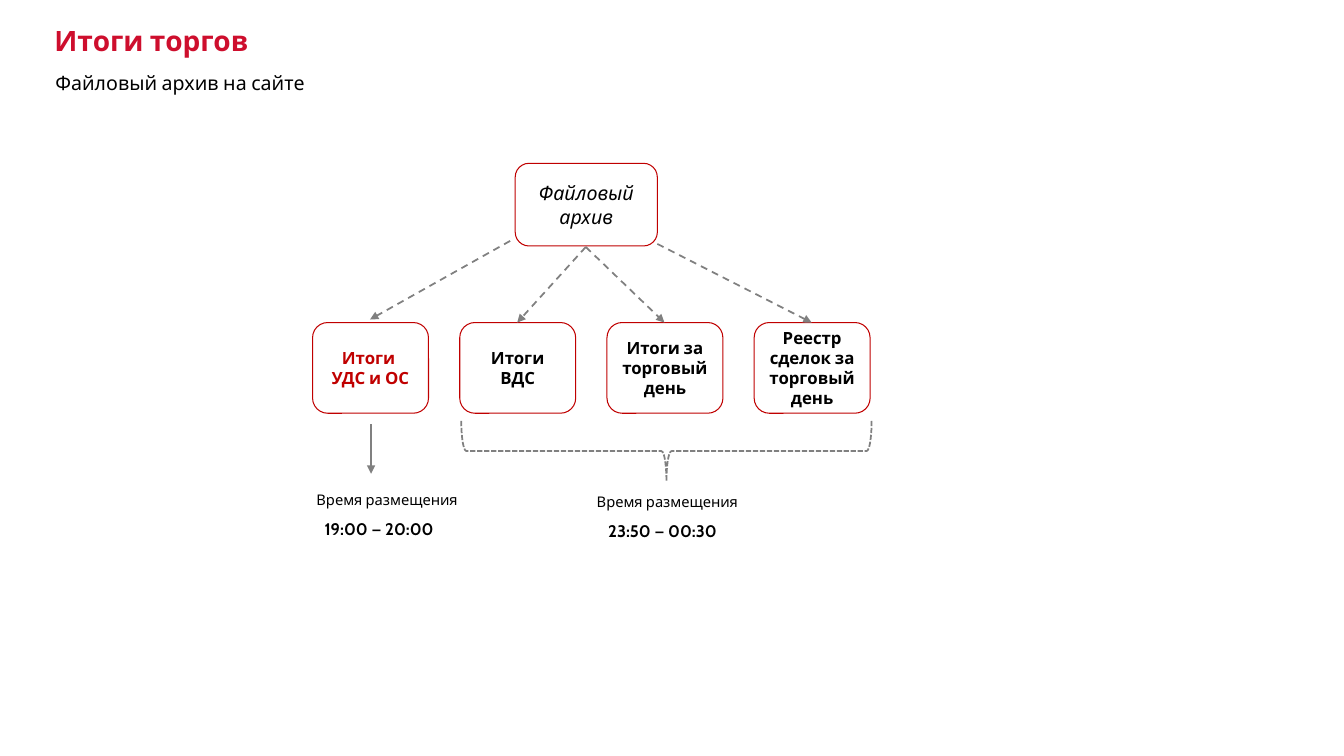
"""Builds the slide on the file archive of trading results."""
import pptx
import pptx.util
import pptx.dml.color
import pptx.enum.dml
import pptx.enum.shapes
import pptx.enum.text
import pptx.oxml
import pptx.oxml.ns

Inches = pptx.util.Inches
Pt = pptx.util.Pt
RGBColor = pptx.dml.color.RGBColor
SHAPE = pptx.enum.shapes.MSO_SHAPE
DASH = pptx.enum.dml.MSO_LINE
ALIGN = pptx.enum.text.PP_ALIGN
ANCHOR = pptx.enum.text.MSO_ANCHOR

TITLE_RED = RGBColor(0xCE, 0x0E, 0x2D)
RED = RGBColor(0xC0, 0x00, 0x00)
BLACK = RGBColor(0x00, 0x00, 0x00)
GRAY = RGBColor(0x80, 0x80, 0x80)


def write(sp, text, align, size, color=BLACK, **fmt):
    tf = sp.text_frame
    tf.word_wrap = True
    for i, line in enumerate(text.split("\n")):
        p = tf.paragraphs[0] if i == 0 else tf.add_paragraph()
        p.alignment = align
        r = p.add_run()
        r.text = line
        r.font.color.rgb = color
        for name, value in {"name": "Cabin", "size": Pt(size), **fmt}.items():
            setattr(r.font, name, value)
    return tf


def outline(sp, color, width, dash=None):
    sp.line.color.rgb = color
    sp.line.width = Pt(width)
    if dash:
        sp.line.dash_style = dash


prs = pptx.Presentation()
prs.slide_width, prs.slide_height = Inches(13.33), Inches(7.5)
s = prs.slides.add_slide(prs.slide_layouts[6])

sp = s.shapes.add_textbox(Inches(0.54), Inches(0.29), Inches(11.93), Inches(0.28))
tf = write(sp, "Итоги торгов", ALIGN.LEFT, 20, TITLE_RED, bold=True)
for side in ("left", "top", "right", "bottom"):
    setattr(tf, f"margin_{side}", 0)
tf.paragraphs[0].line_spacing = Pt(20)
tf.paragraphs[0].space_before = Pt(1)

bold = {"size": 12, "bold": True}
boxes = [((5.11, 1.62, 1.41, 0.82), "Файловый архив", {"size": 14, "italic": True})]
archives = [
    ("Итоги \nУДС и ОС", RED),
    ("Итоги ВДС", BLACK),
    ("Итоги за торговый день", BLACK),
    ("Реестр сделок за торговый день", BLACK),
]
for i, (text, color) in enumerate(archives):
    boxes.append(((3.1 + 1.46 * i, 3.2, 1.15, 0.9), text, {"color": color, **bold}))
for rect, text, fmt in boxes:
    sp = s.shapes.add_shape(SHAPE.ROUNDED_RECTANGLE, *map(Inches, rect))
    sp.shadow.inherit = False
    sp.fill.background()
    outline(sp, RED, 0.75)
    tf = write(sp, text, ALIGN.CENTER, **fmt)
    tf.vertical_anchor = ANCHOR.MIDDLE

sp = s.shapes.add_shape(SHAPE.RIGHT_BRACE, Inches(6.31), Inches(2.44), Inches(0.6), Inches(4.07))
sp.rotation = 90
sp.shadow.inherit = False
sp.fill.background()
outline(sp, GRAY, 1.25, DASH.SQUARE_DOT)
sp.line._get_or_add_ln().find(pptx.oxml.ns.qn("a:prstDash")).set("val", "sysDash")

arrows = [
    (3.68, 4.21, 3.68, 4.7, None),
    (5.06, 2.39, 3.67, 3.17, DASH.DASH),
    (5.81, 2.45, 5.13, 3.2, DASH.DASH),
    (5.81, 2.45, 6.59, 3.2, DASH.DASH),
    (6.52, 2.42, 8.05, 3.2, DASH.DASH),
]
for *ends, dash in arrows:
    sp = s.shapes.add_connector(pptx.enum.shapes.MSO_CONNECTOR.STRAIGHT, *map(Inches, ends))
    outline(sp, GRAY, 1.25, dash)
    ns = pptx.oxml.ns.nsdecls("a")
    sp.line._get_or_add_ln().append(pptx.oxml.parse_xml(f'<a:tailEnd {ns} type="triangle"/>'))
    sp._element.spPr.append(pptx.oxml.parse_xml(f"<a:effectLst {ns}/>"))

labels = [
    ((0.45, 0.65, 11.28, 0.34), "Файловый архив на сайте", ALIGN.LEFT, {"size": 14}),
    ((3.04, 4.82, 1.68, 0.28), "Время размещения", ALIGN.LEFT, {"size": 10.5}),
    ((5.82, 4.84, 1.68, 0.28), "Время размещения", ALIGN.LEFT, {"size": 10.5}),
    ((3.03, 5.1, 1.46, 0.3), "19:00 — 20:00", ALIGN.CENTER, bold),
    ((5.62, 5.12, 1.94, 0.3), "23:50 — 00:30 ", ALIGN.CENTER, bold),
]
for rect, text, align, fmt in labels:
    sp = s.shapes.add_textbox(*map(Inches, rect))
    write(sp, text, align, **fmt)

prs.save("out.pptx")
